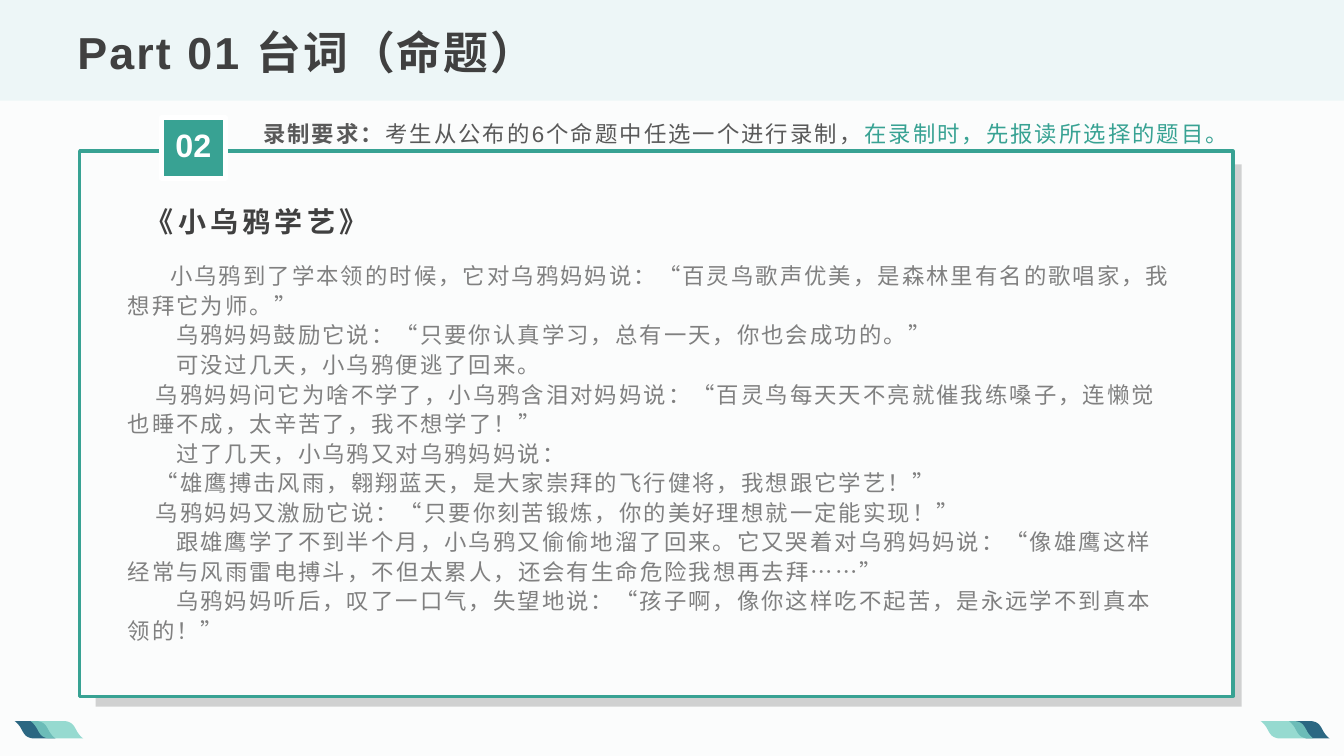
"""Build the slide with the recital text of the little crow."""
import lxml.etree
import pptx
import pptx.dml.color
import pptx.enum.shapes
import pptx.enum.text
import pptx.oxml.ns
import pptx.util

Cm = pptx.util.Cm
Anchor = pptx.enum.text.MSO_ANCHOR
Align = pptx.enum.text.PP_ALIGN

TEAL, MINT, NAVY = "38A293", "7DD2C6", "2B6782"
PAPER, WHITE, DARK = "FBFCFC", "FFFFFF", "404040"

STORY = [
    (1.07, "小乌鸦到了学本领的时候，它对乌鸦妈妈说：“百灵鸟歌声优美，是森林里有名的歌唱家，我想拜它为师。”"),
    (1.22, "乌鸦妈妈鼓励它说：“只要你认真学习，总有一天，你也会成功的。”"),
    (1.22, "可没过几天，小乌鸦便逃了回来。"),
    (0.71, "乌鸦妈妈问它为啥不学了，小乌鸦含泪对妈妈说：“百灵鸟每天天不亮就催我练嗓子，连懒觉也睡不成，太辛苦了，我不想学了！”"),
    (1.22, "过了几天，小乌鸦又对乌鸦妈妈说："),
    (0.71, "“雄鹰搏击风雨，翱翔蓝天，是大家崇拜的飞行健将，我想跟它学艺！”"),
    (0.71, "乌鸦妈妈又激励它说：“只要你刻苦锻炼，你的美好理想就一定能实现！”"),
    (1.22, "跟雄鹰学了不到半个月，小乌鸦又偷偷地溜了回来。它又哭着对乌鸦妈妈说：“像雄鹰这样经常与风雨雷电搏斗，不但太累人，还会有生命危险我想再去拜……”"),
    (1.22, "乌鸦妈妈听后，叹了一口气，失望地说：“孩子啊，像你这样吃不起苦，是永远学不到真本领的！”"),
]

LEAF_CURVES = [
    [(0, 0), (0, 0), (0.1, 0.06), (0.18, 0.22)],
    [(0.18, 0.22), (0.26, 0.37), (0.3, 0.41), (0.46, 0.44)],
]
LEAF_HEIGHT = 0.44


def rgb(code):
    """Return the colour for a hex string."""
    return pptx.dml.color.RGBColor.from_string(code)


def paint(shape, color, opacity=100, line=None, line_width=0):
    """Give a shape its fill, opacity and outline."""
    shape.shadow.inherit = False
    shape.fill.solid()
    shape.fill.fore_color.rgb = rgb(color)
    if opacity < 100:
        solid = shape.fill._xPr.find(pptx.oxml.ns.qn("a:solidFill"))
        alpha = lxml.etree.SubElement(solid[0], pptx.oxml.ns.qn("a:alpha"))
        alpha.set("val", str(opacity * 1000))
    if line:
        shape.line.color.rgb = rgb(line)
        shape.line.width = pptx.util.Pt(line_width)
    else:
        shape.line.fill.background()


def add_panel(slide, box, color, **style):
    """Add a rectangle, placed in centimetres."""
    panel = slide.shapes.add_shape(
        pptx.enum.shapes.MSO_SHAPE.RECTANGLE, *map(Cm, box))
    paint(panel, color, **style)


def bezier(curve, t):
    """Return the point of a cubic curve at t."""
    weights = ((1 - t) ** 3, 3 * t * (1 - t) ** 2, 3 * t * t * (1 - t), t ** 3)
    return tuple(sum(w * point[axis] for w, point in zip(weights, curve))
                 for axis in (0, 1))


def add_leaf(slide, left, top, width, color, opacity=100):
    """Add a curved leaf that is symmetric about its centre."""
    edge = [bezier(curve, step / 8) for curve in LEAF_CURVES for step in range(9)]
    outline = edge + [(width - x, LEAF_HEIGHT - y) for x, y in edge]
    points = [(Cm(left + x), Cm(top + y)) for x, y in outline]
    builder = slide.shapes.build_freeform(*points[0])
    builder.add_line_segments(points[1:], close=True)
    paint(builder.convert_to_shape(), color, opacity)


def add_text(slide, box, paragraphs, size, spacing=0, leading=1.0,
             anchor=Anchor.TOP, align=Align.LEFT, top=0.13, bottom=0.13):
    """Add paragraphs, each an indent and a list of (text, colour, bold) runs."""
    frame = slide.shapes.add_textbox(*map(Cm, box)).text_frame
    frame.word_wrap = True
    frame.vertical_anchor = anchor
    frame.margin_top, frame.margin_bottom = Cm(top), Cm(bottom)
    for number, (indent, runs) in enumerate(paragraphs):
        paragraph = frame.add_paragraph() if number else frame.paragraphs[0]
        paragraph.alignment = align
        paragraph.line_spacing = leading
        if indent:
            paragraph._p.get_or_add_pPr().set("indent", str(Cm(indent)))
        for text, color, bold in runs:
            run = paragraph.add_run()
            run.text = text
            run.font.name = "Arial"
            run.font.size = pptx.util.Pt(size)
            run.font.bold = bold
            run.font.color.rgb = rgb(color)
            if spacing:
                run._r.get_or_add_rPr().set("spc", str(int(spacing * 100)))


def main():
    """Build and save the slide."""
    deck = pptx.Presentation()
    deck.slide_width, deck.slide_height = Cm(33.87), Cm(19.05)
    slide = deck.slides.add_slide(deck.slide_layouts[6])
    slide.background.fill.solid()
    slide.background.fill.fore_color.rgb = rgb(PAPER)

    add_panel(slide, (2.41, 4.14, 28.88, 13.67), "BFBFBF", opacity=70)
    add_panel(slide, (2.01, 3.81, 29.06, 13.74), PAPER, line=TEAL, line_width=2.5)
    add_panel(slide, (0, 0, 33.87, 2.54), "EDF6F7")
    for navy_left, mint_left in ((0.37, 0.77), (32.48, 31.77)):
        add_leaf(slide, navy_left, 18.17, 1.03, NAVY)
        add_leaf(slide, mint_left, 18.17, 1.33, MINT, opacity=80)

    story = [(indent, [(text, "808080", False)]) for indent, text in STORY]
    add_text(slide, (2.97, 6.55, 26.95, 10.26), story, 16, 1.5, 1.1, top=0)
    add_text(slide, (3.43, 4.65, 11.43, 1.35),
             [(0, [("《小乌鸦学艺》", DARK, True)])],
             20, 3, 1.2, anchor=Anchor.BOTTOM, bottom=0)
    add_text(slide, (1.7, 0.43, 30.48, 1.7),
             [(0, [("Part 01 台词（命题）", DARK, True)])],
             32, 1.5, 0.9, anchor=Anchor.BOTTOM)

    add_panel(slide, (4.06, 2.97, 1.63, 1.52), TEAL, line=WHITE, line_width=3.5)
    add_text(slide, (4.14, 2.92, 1.47, 1.63), [(0, [("02", WHITE, True)])],
             23.1, leading=1.1, align=Align.CENTER)
    requirement = [("录制要求：", "595959", True),
                   ("考生从公布的6个命题中任选一个进行录制，", "595959", False),
                   ("在录制时，先报读所选择的题目。", TEAL, False)]
    add_text(slide, (6.38, 2.77, 27.4, 1.07), [(0, requirement)], 16, 1.5, 1.2)

    deck.save("out.pptx")


if __name__ == "__main__":
    main()
